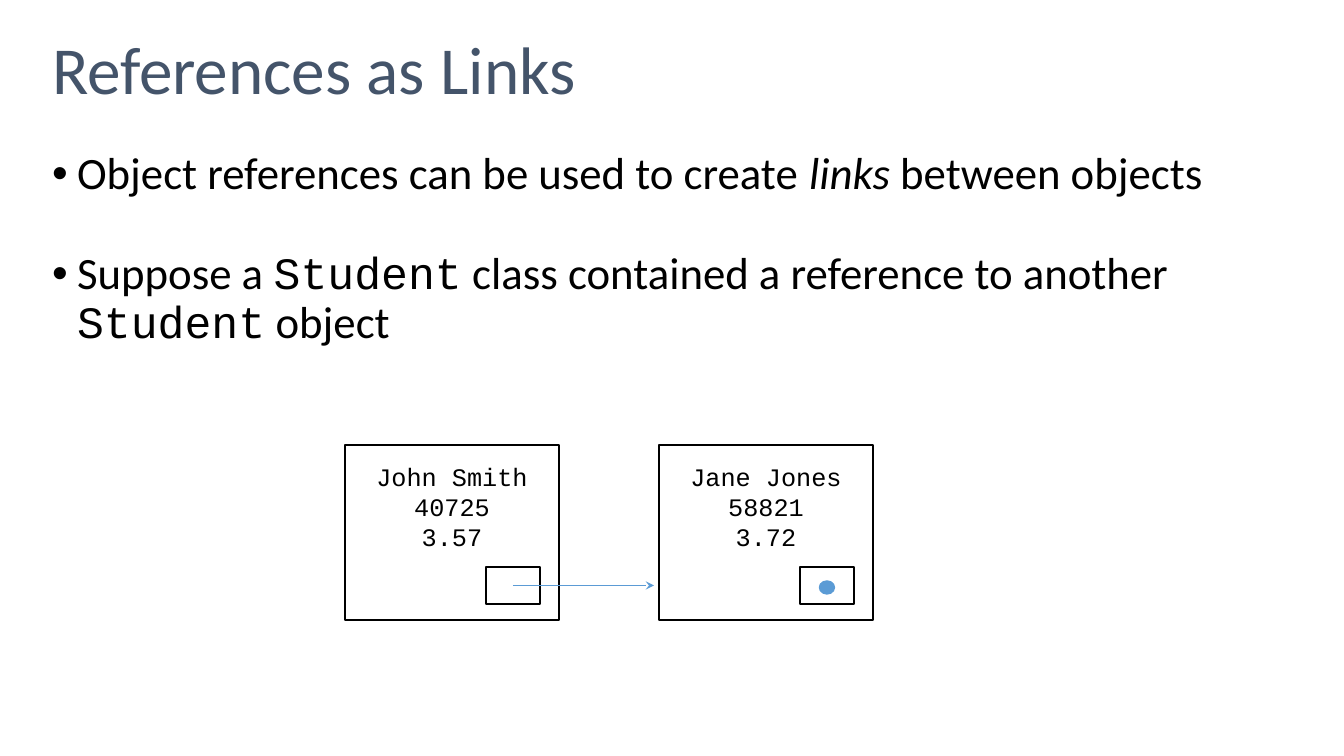
"""Build the slide on object references as links between Student objects."""
from lxml import etree
from pptx import Presentation
from pptx.dml.color import RGBColor
from pptx.enum.shapes import MSO_CONNECTOR, MSO_SHAPE
from pptx.enum.text import MSO_ANCHOR, MSO_AUTO_SIZE, PP_ALIGN
from pptx.oxml.ns import qn
from pptx.util import Pt

TITLE = "References as Links"
BODY_FONT, CODE_FONT = "Calibri", "Courier New"
BULLETS = [
    (10, [("Object references can be used to create ", "plain"), ("links", "italic"),
          (" between objects", "plain")]),
    (37, [("Suppose a ", "plain"), ("Student", "code"),
          (" class contained a reference to another ", "plain"),
          ("Student", "code"), (" object", "plain")]),
]
STUDENTS = [("John Smith", "40725", "3.57"), ("Jane Jones", "58821", "3.72")]
COLORS = {"title": "44546A", "text": "000000", "link": "5B9BD5"}

SLIDE_WIDTH, SLIDE_HEIGHT = 1344, 756
SCALE = 12192000 / SLIDE_WIDTH
TITLE_BOX = (42, 0, 1260, 146)
BODY_BOX = (42, 146, 1260, 571)
BULLET_INDENT = 25
STUDENT_LEFT, STUDENT_TOP, STUDENT_PITCH = 345, 445, 314
STUDENT_WIDTH, STUDENT_HEIGHT = 214, 175
TEXT_TOP = 16
SLOT_X, SLOT_Y, SLOT_WIDTH, SLOT_HEIGHT = 141, 122, 54, 37
DOT_WIDTH, DOT_HEIGHT, DOT_DROP = 15, 13, 2
ARROW_GAP = 5

RECTANGLE, OVAL = MSO_SHAPE.RECTANGLE, MSO_SHAPE.OVAL
STRAIGHT = MSO_CONNECTOR.STRAIGHT
TOP, MIDDLE = MSO_ANCHOR.TOP, MSO_ANCHOR.MIDDLE
LEFT, CENTER = PP_ALIGN.LEFT, PP_ALIGN.CENTER
NO_AUTOFIT = MSO_AUTO_SIZE.NONE


def emu(pixels):
    return round(pixels * SCALE)


def rgb(name):
    return RGBColor.from_string(COLORS[name])


def format_run(run, font, size, color):
    run.font.name = font
    run.font.size = Pt(size)
    run.font.color.rgb = rgb(color)


def place(placeholder, box, anchor):
    placeholder.left, placeholder.top, placeholder.width, placeholder.height = map(emu, box)
    frame = placeholder.text_frame
    frame.word_wrap = True
    frame.auto_size = NO_AUTOFIT
    frame.vertical_anchor = anchor
    return frame


def add_title(slide):
    frame = place(slide.shapes.title, TITLE_BOX, MIDDLE)
    frame.text = TITLE
    paragraph = frame.paragraphs[0]
    paragraph.alignment = LEFT
    paragraph.line_spacing = 0.9
    format_run(paragraph.runs[0], BODY_FONT, 48, "title")


def add_bullets(slide):
    frame = place(slide.placeholders[1], BODY_BOX, TOP)
    for index, (space, pieces) in enumerate(BULLETS):
        paragraph = frame.add_paragraph() if index else frame.paragraphs[0]
        paragraph.line_spacing = 0.9
        paragraph.space_before = Pt(space)
        properties = paragraph._p.get_or_add_pPr()
        properties.set("marL", str(emu(BULLET_INDENT)))
        properties.set("indent", str(-emu(BULLET_INDENT)))
        etree.SubElement(properties, qn("a:buFont"), typeface="Arial")
        etree.SubElement(properties, qn("a:buChar"), char="•")
        for text, style in pieces:
            run = paragraph.add_run()
            run.text = text
            format_run(run, CODE_FONT if style == "code" else BODY_FONT, 32, "text")
            if style == "italic":
                run.font.italic = True


def add_outline(slide, kind, box, line, fill=None):
    shape = slide.shapes.add_shape(kind, *map(emu, box))
    shape.shadow.inherit = False
    shape.line.color.rgb = rgb(line)
    shape.line.width = Pt(1)
    if fill:
        shape.fill.solid()
        shape.fill.fore_color.rgb = rgb(fill)
    else:
        shape.fill.background()
    return shape


def add_student(slide, left, lines):
    box = (left, STUDENT_TOP, STUDENT_WIDTH, STUDENT_HEIGHT)
    frame = add_outline(slide, RECTANGLE, box, "text").text_frame
    frame.word_wrap = False
    frame.vertical_anchor = TOP
    frame.margin_top = emu(TEXT_TOP)
    frame.text = "\n".join(lines)
    for paragraph in frame.paragraphs:
        paragraph.alignment = CENTER
        format_run(paragraph.runs[0], CODE_FONT, 18, "text")
    slot = (left + SLOT_X, STUDENT_TOP + SLOT_Y, SLOT_WIDTH, SLOT_HEIGHT)
    add_outline(slide, RECTANGLE, slot, "text")


def add_link(slide, start, end, y):
    link = slide.shapes.add_connector(STRAIGHT, emu(start), emu(y), emu(end), emu(y))
    link.line.color.rgb = rgb("link")
    link.line.width = Pt(1)
    etree.SubElement(link.line._get_or_add_ln(), qn("a:tailEnd"), type="stealth")
    etree.SubElement(link._element.spPr, qn("a:effectLst"))


def add_diagram(slide):
    lefts = [STUDENT_LEFT + index * STUDENT_PITCH for index in range(len(STUDENTS))]
    for left, lines in zip(lefts, STUDENTS):
        add_student(slide, left, lines)
    centers = [left + SLOT_X + SLOT_WIDTH / 2 for left in lefts]
    middle = STUDENT_TOP + SLOT_Y + SLOT_HEIGHT / 2
    for center, next_left in zip(centers, lefts[1:]):
        add_link(slide, center, next_left - ARROW_GAP, middle)
    dot = (centers[-1] - DOT_WIDTH / 2, middle + DOT_DROP - DOT_HEIGHT / 2, DOT_WIDTH, DOT_HEIGHT)
    add_outline(slide, OVAL, dot, "link", "link")


def main():
    presentation = Presentation()
    presentation.slide_width = emu(SLIDE_WIDTH)
    presentation.slide_height = emu(SLIDE_HEIGHT)
    slide = presentation.slides.add_slide(presentation.slide_layouts[1])
    add_title(slide)
    add_bullets(slide)
    add_diagram(slide)
    presentation.save("out.pptx")


if __name__ == "__main__":
    main()
